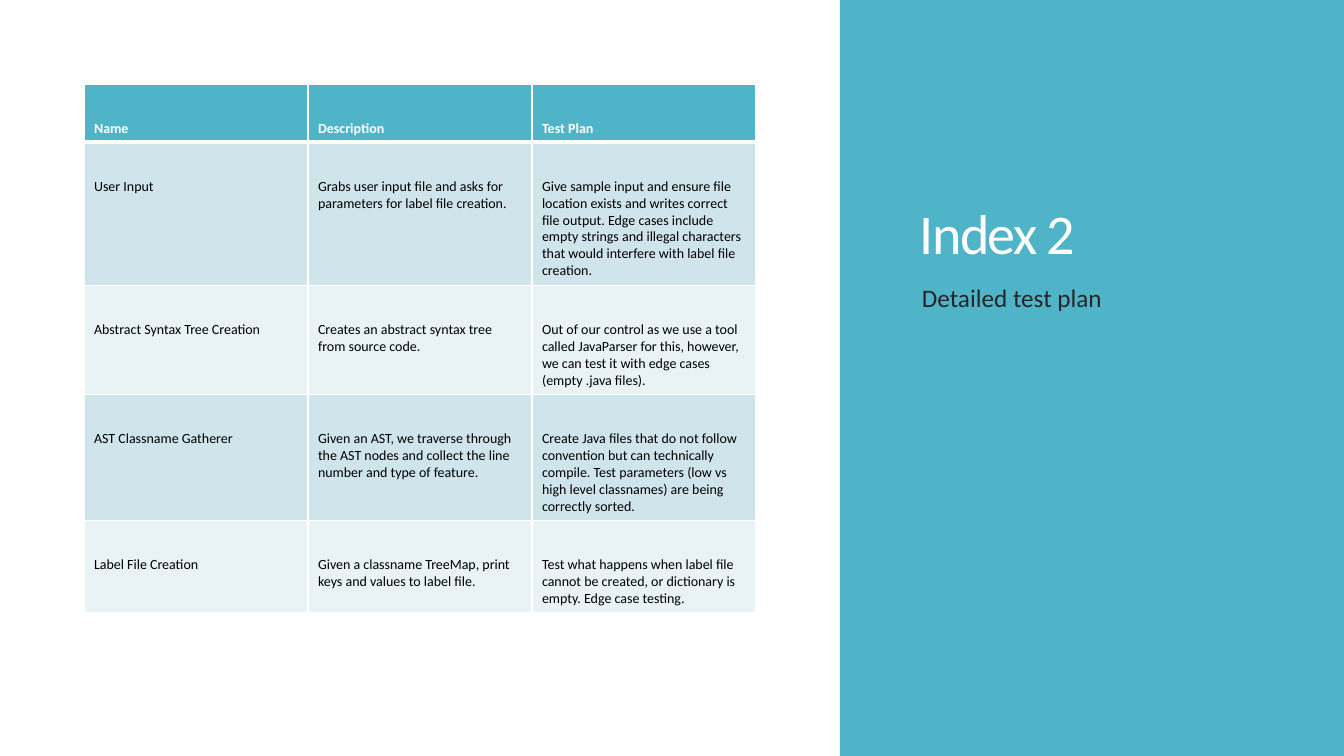
from dataclasses import dataclass

from lxml import etree
from pptx import Presentation
from pptx.dml.color import RGBColor
from pptx.enum import shapes, text
from pptx.oxml.ns import qn
from pptx.util import Pt

FONT = "Calibri"
TEAL, WHITE, BLACK, DARK_GRAY = "50B4C8", "FFFFFF", "000000", "262626"
BANDS = ("D0E5EB", "E9F2F5")
COLUMN_WIDTH = 160
LINE_HEIGHT = 12.2
CELL_TOP, CELL_BOTTOM = 25.6, 3.6


@dataclass
class PlanRow:
    cells: tuple[str, str, str]
    lines: int


@dataclass
class Label:
    content: str
    box: tuple[float, float, float, float]
    size: float
    color: str
    anchor: text.MSO_ANCHOR
    line_spacing: float = 1.0
    tracking: int = 0


ROWS = [
    PlanRow(("Name", "Description", "Test Plan"), 1),
    PlanRow(("User Input",
             "Grabs user input file and asks for parameters for label file creation.",
             "Give sample input and ensure file location exists and writes correct file "
             "output. Edge cases include empty strings and illegal characters that would "
             "interfere with label file creation."), 6),
    PlanRow(("Abstract Syntax Tree Creation",
             "Creates an abstract syntax tree from source code.",
             "Out of our control as we use a tool called JavaParser for this, however, "
             "we can test it with edge cases (empty .java files)."), 4),
    PlanRow(("AST Classname Gatherer",
             "Given an AST, we traverse through the AST nodes and collect the line number "
             "and type of feature.",
             "Create Java files that do not follow convention but can technically compile. "
             "Test parameters (low vs high level classnames) are being correctly sorted."), 5),
    PlanRow(("Label File Creation",
             "Given a classname TreeMap, print keys and values to label file.",
             "Test what happens when label file cannot be created, or dictionary is empty. "
             "Edge case testing."), 3),
]
LABELS = [
    Label("Index 2", (650, 42.5, 266.5, 151), 40, WHITE, text.MSO_ANCHOR.BOTTOM, 0.85, -120),
    Label("Detailed test plan", (651.5, 198, 268, 246), 18, DARK_GRAY, text.MSO_ANCHOR.TOP),
]


def rgb(color: str) -> RGBColor:
    return RGBColor.from_string(color)


def add_run(p, content: str, size: float, color: str, bold: bool = False):
    r = p.add_run()
    r.text = content
    r.font.name, r.font.size, r.font.bold = FONT, Pt(size), bold
    r.font.color.rgb = rgb(color)
    return r


def add_label(s, label: Label) -> None:
    tf = s.shapes.add_textbox(*map(Pt, label.box)).text_frame
    tf.word_wrap = True
    tf.vertical_anchor = label.anchor
    p = tf.paragraphs[0]
    p.line_spacing = label.line_spacing
    r = add_run(p, label.content, label.size, label.color)
    if label.tracking:
        r.font._element.set("spc", str(label.tracking))


def set_borders(cell, widths: dict[str, float]) -> None:
    """Give the cell white edges; call before the fill, which must follow them."""
    tc_pr = cell._tc.get_or_add_tcPr()
    for edge, width in widths.items():
        ln = etree.SubElement(tc_pr, qn(f"a:{edge}"), w=str(Pt(width)))
        fill = etree.SubElement(ln, qn("a:solidFill"))
        etree.SubElement(fill, qn("a:srgbClr"), val=WHITE)


def fill_cell(cell, content: str, row: int) -> None:
    header = row == 0
    cell.margin_top, cell.margin_bottom = Pt(CELL_TOP), Pt(CELL_BOTTOM)
    cell.margin_left = cell.margin_right = Pt(7.2)
    set_borders(cell, {"lnL": 1, "lnR": 1, "lnT": 3 if row == 1 else 1,
                       "lnB": 3 if header else 1})
    cell.fill.solid()
    cell.fill.fore_color.rgb = rgb(TEAL if header else BANDS[(row - 1) % 2])
    add_run(cell.text_frame.paragraphs[0], content, 10, WHITE if header else BLACK, header)


def add_plan_table(s, rows: list[PlanRow]) -> None:
    heights = [CELL_TOP + CELL_BOTTOM + LINE_HEIGHT * row.lines for row in rows]
    columns = len(rows[0].cells)
    table = s.shapes.add_table(len(rows), columns, Pt(60), Pt(60),
                               Pt(COLUMN_WIDTH * columns), Pt(sum(heights))).table
    for column in table.columns:
        column.width = Pt(COLUMN_WIDTH)
    for i, (row, height) in enumerate(zip(rows, heights)):
        table.rows[i].height = Pt(height)
        for j, content in enumerate(row.cells):
            fill_cell(table.cell(i, j), content, i)


def main() -> None:
    prs = Presentation()
    prs.slide_width, prs.slide_height = Pt(960), Pt(540)
    s = prs.slides.add_slide(prs.slide_layouts[6])
    panel = s.shapes.add_shape(shapes.MSO_SHAPE.RECTANGLE, Pt(600), Pt(0), Pt(360), Pt(540))
    panel.shadow.inherit = False
    panel.fill.solid()
    panel.fill.fore_color.rgb = rgb(TEAL)
    panel.line.fill.background()
    add_plan_table(s, ROWS)
    for label in LABELS:
        add_label(s, label)
    prs.save("out.pptx")


if __name__ == "__main__":
    main()
